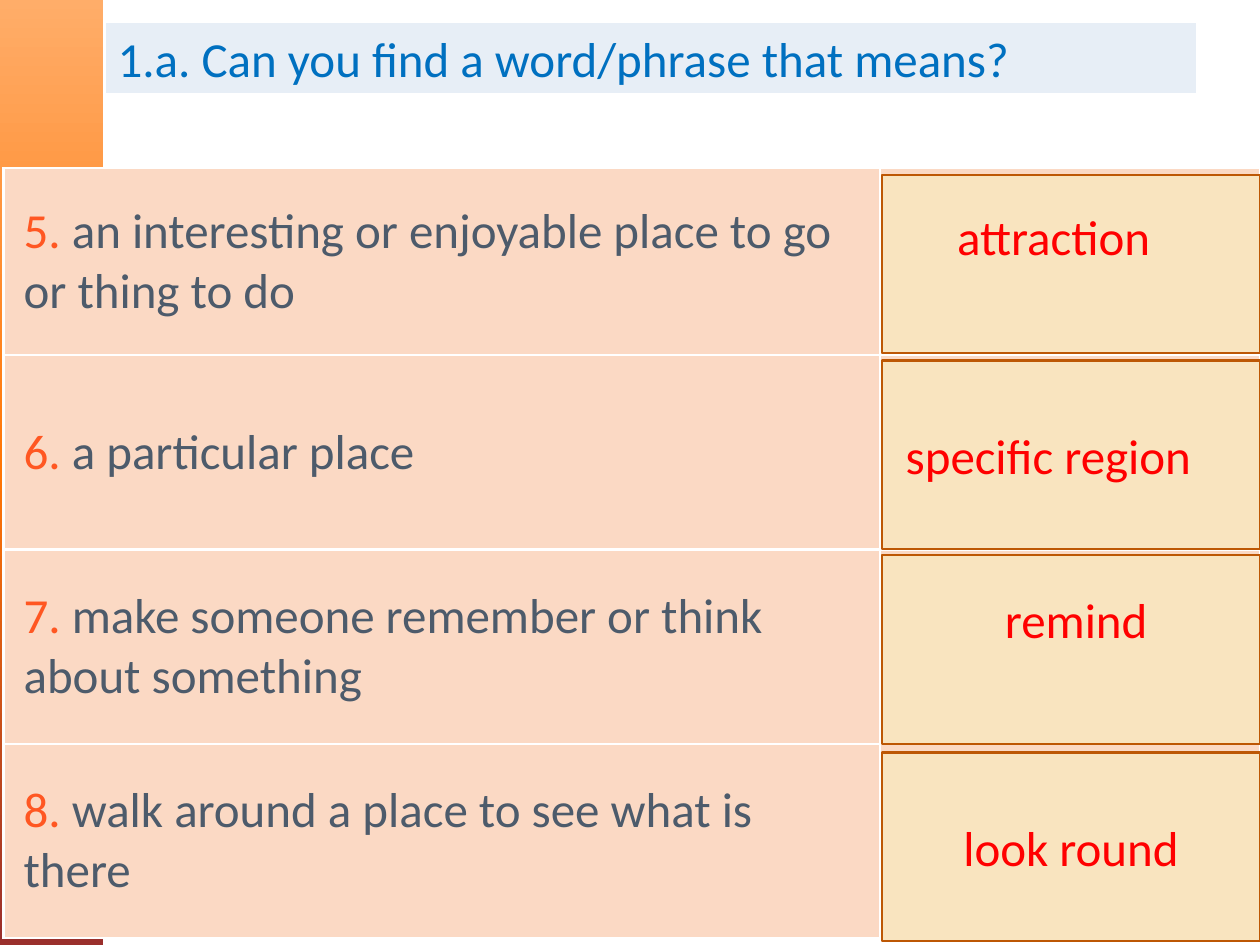
from copy import deepcopy as clone
from pptx import Presentation as Deck
from pptx.dml.color import RGBColor as Rgb
from pptx.enum.shapes import MSO_SHAPE as Kind
from pptx.enum.text import MSO_ANCHOR as Anchor, PP_ALIGN as Align
from pptx.oxml import parse_xml
from pptx.oxml.ns import nsdecls, qn
from pptx.util import Pt

TITLE = "1.a. Can you find a word/phrase that means?"
CLUES = [
    ("5. ", "an interesting or enjoyable place to go or thing to do"),
    ("6. ", "a particular place"),
    ("7. ", "make someone remember or think about something"),
    ("8. ", "walk around a place to see what is there"),
]
WORDS = [
    ("attraction", 100, 102, {"margin_right": 27, "margin_bottom": 36}),
    ("specific region", 206, 108, {"margin_right": 33}),
    ("remind", 317, 108, {"margin_left": 13, "margin_bottom": 38}),
    ("look round", 430, 108, {}),
]
PAD = {"margin_left": 7.2, "margin_right": 7.2, "margin_top": 3.6, "margin_bottom": 3.6}


def color(code):
    """Turn a hex string into a colour."""
    return Rgb.from_string(code)


def apply(item, vals):
    """Set every attribute named in a dict."""
    for name, val in vals.items():
        setattr(item, name, val)


def pad(item, vals):
    """Set the inner margins in points."""
    apply(item, {name: Pt(val) for name, val in {**PAD, **vals}.items()})


def paint(item, code):
    """Give an item a solid fill."""
    item.fill.solid()
    item.fill.fore_color.rgb = color(code)


def edge(shape, code):
    """Give a shape its outline."""
    shape.line.color.rgb = color(code)
    shape.line.width = Pt(1.25)


def write(para, text, code):
    """Add a run in the slide's font."""
    run = para.add_run()
    run.text = text
    apply(run.font, {"name": "Calibri", "size": Pt(28), "bold": False})
    run.font.color.rgb = color(code)


def place(item, left, top, width, height):
    """Move and size an item in points."""
    apply(item, {"left": Pt(left), "top": Pt(top), "width": Pt(width), "height": Pt(height)})


def add_band(slide):
    """Draw the gradient band on the left."""
    band = slide.shapes.add_shape(Kind.RECTANGLE, 0, 0, Pt(59), Pt(540))
    band.shadow.inherit = False
    band.line.fill.background()
    band.fill.gradient()
    band.fill.gradient_angle = 270
    stops = next(band.fill._xPr.iter(qn("a:gsLst")))
    stops.append(clone(stops[-1]))
    for stop, code, spot in zip(band.fill.gradient_stops, ("FFAD69", "FF7605", "9A2F2C"), (0, 0.5, 1)):
        stop.color.rgb = color(code)
        stop.position = spot


def add_title(slide):
    """Fill the title and round its frame."""
    title = slide.shapes.title
    place(title, 60, 12.5, 624, 41.5)
    geom = f'<a:prstGeom {nsdecls("a")} prst="roundRect"><a:avLst/></a:prstGeom>'
    title._element.spPr.insert(1, parse_xml(geom))
    paint(title, "E7EEF6")
    edge(title, "FFFFFF")
    frame = title.text_frame
    apply(frame, {"word_wrap": True, "vertical_anchor": Anchor.MIDDLE})
    pad(frame, {})
    frame.paragraphs[0].alignment = Align.LEFT
    write(frame.paragraphs[0], TITLE, "0070C0")


def rule(cell):
    """Draw white borders round a cell."""
    for spot, side in enumerate(("lnL", "lnR", "lnT", "lnB")):
        line = (f'<a:{side} {nsdecls("a")} w="{Pt(1.5)}"><a:solidFill>'
                f'<a:srgbClr val="FFFFFF"/></a:solidFill></a:{side}>')
        cell._tc.get_or_add_tcPr().insert(spot, parse_xml(line))


def add_clues(slide):
    """Build the table of definitions."""
    table = slide.shapes.add_table(len(CLUES), 2, Pt(2), Pt(96), Pt(718), Pt(440)).table
    apply(table, {"first_row": False, "horz_banding": False})
    for col, width in zip(table.columns, (501, 217)):
        col.width = Pt(width)
    for row, height, (num, clue) in zip(table.rows, (107, 111, 111, 111), CLUES):
        row.height = Pt(height)
        for cell in row.cells:
            paint(cell, "FBD9C4")
            rule(cell)
            cell.vertical_anchor = Anchor.MIDDLE
            pad(cell, {"margin_left": 11.5, "margin_right": 11.5})
        para = row.cells[0].text_frame.paragraphs[0]
        write(para, num, "FF5722")
        write(para, clue, "4D5B6B")


def add_word(slide, word, top, height, gaps):
    """Draw one answer box."""
    box = slide.shapes.add_shape(Kind.RECTANGLE, Pt(504), Pt(top), Pt(216), Pt(height))
    box.shadow.inherit = False
    paint(box, "F9E4BF")
    edge(box, "BD5704")
    frame = box.text_frame
    apply(frame, {"word_wrap": True, "vertical_anchor": Anchor.MIDDLE})
    pad(frame, gaps)
    frame.paragraphs[0].alignment = Align.CENTER
    write(frame.paragraphs[0], word, "FF0000")


def main():
    """Build and save the slide."""
    deck = Deck()
    apply(deck, {"slide_width": Pt(720), "slide_height": Pt(540)})
    slide = deck.slides.add_slide(deck.slide_layouts[5])
    add_band(slide)
    add_title(slide)
    add_clues(slide)
    for item in WORDS:
        add_word(slide, *item)
    deck.save("out.pptx")


if __name__ == "__main__":
    main()
